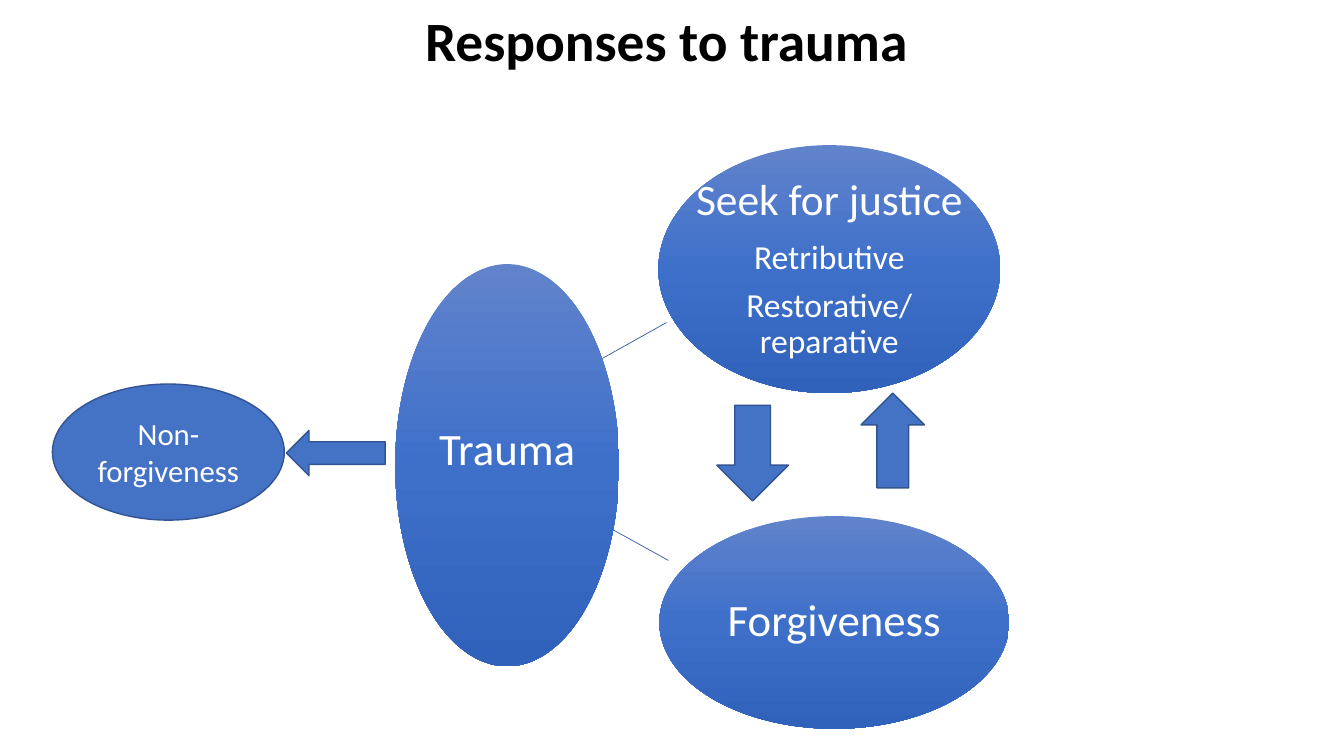
import copy
from dataclasses import dataclass

import pptx
import pptx.dml.color
import pptx.enum.shapes
import pptx.enum.text
import pptx.oxml.ns
import pptx.util
from lxml import etree

PX = 9144  # EMU per px, 100 px to the inch
FONT = "Calibri"
COLORS = {
    "black": "000000", "white": "FFFFFF", "blue": "4472C4", "edge": "325491",
    "link": "365B9D", "top": "6183CB", "mid": "3E70CA", "bottom": "3062BB",
}
GRADIENT = [(0, "top"), (0.5, "mid"), (1, "bottom")]
SHAPE = pptx.enum.shapes.MSO_SHAPE
CENTER = pptx.enum.text.PP_ALIGN.CENTER
MIDDLE = pptx.enum.text.MSO_ANCHOR.MIDDLE


@dataclass(frozen=True)
class Line:
    text: str
    size: float
    after: float = 0


@dataclass(frozen=True)
class Node:
    kind: int
    box: tuple[int, int, int, int]
    lines: tuple[Line, ...] = ()
    gradient: bool = False
    spacing: float = 1.0
    wrap: bool = True
    margins: tuple[int, int, int, int] = (10, 5, 10, 5)


LINKS = [(587, 514, 663, 556), (586, 362, 661, 320)]
NODES = [
    Node(SHAPE.OVAL, (392, 262, 222, 399), (Line("Trauma", 32),), True,
         wrap=False, margins=(0, 0, 0, 34)),
    Node(SHAPE.OVAL, (653, 144, 339, 246),
         (Line("Seek for justice", 31, 11), Line("Retributive", 24, 8.4),
          Line("Restorative/\vreparative", 24)),
         True, 0.9, False, (0, 0, 0, 0)),
    Node(SHAPE.OVAL, (654, 512, 347, 211), (Line("Forgiveness", 32),), True, 0.9,
         False, (0, 0, 0, 0)),
    Node(SHAPE.DOWN_ARROW, (711, 402, 71, 95)),
    Node(SHAPE.UP_ARROW, (854, 390, 63, 94)),
    Node(SHAPE.LEFT_ARROW, (284, 427, 98, 45)),
    Node(SHAPE.OVAL, (52, 381, 230, 135), (Line("Non-forgiveness", 22),)),
]


def rgb(name: str) -> pptx.dml.color.RGBColor:
    return pptx.dml.color.RGBColor.from_string(COLORS[name])


def emu(lengths: tuple[int, ...]) -> list[int]:
    return [n * PX for n in lengths]


def apply(target, formats: dict) -> None:
    for name, value in formats.items():
        setattr(target, name, value)


def write_lines(tf, lines: tuple[Line, ...], spacing: float, color: str, bold: bool = False) -> None:
    for i, line in enumerate(lines):
        p = tf.paragraphs[0] if i == 0 else tf.add_paragraph()
        p.text = line.text
        apply(p, {"alignment": CENTER, "line_spacing": spacing,
                  "space_before": pptx.util.Pt(0), "space_after": pptx.util.Pt(line.after)})
        for r in p.runs:
            apply(r.font, {"name": FONT, "size": pptx.util.Pt(line.size), "bold": bold})
            r.font.color.rgb = rgb(color)


def fill_gradient(sp) -> None:
    """Fill from top to bottom through the three gradient colours."""
    sp.fill.gradient()
    sp.fill.gradient_angle = 270
    stops = sp._element.spPr.find(".//" + pptx.oxml.ns.qn("a:gsLst"))
    stops.insert(1, copy.deepcopy(stops[0]))
    for stop, (position, color) in zip(sp.fill.gradient_stops, GRADIENT):
        stop.position = position
        stop.color.rgb = rgb(color)


def add_node(s, node: Node) -> None:
    sp = s.shapes.add_shape(node.kind, *emu(node.box))
    sp.shadow.inherit = False
    if node.gradient:
        fill_gradient(sp)
        sp.line.fill.background()
    else:
        sp.fill.solid()
        sp.fill.fore_color.rgb = rgb("blue")
        sp.line.color.rgb = rgb("edge")
        sp.line.width = pptx.util.Pt(1)
    if node.lines:
        tf = sp.text_frame
        sides = ("margin_left", "margin_top", "margin_right", "margin_bottom")
        apply(tf, dict(zip(sides, emu(node.margins))))
        apply(tf, {"word_wrap": node.wrap, "vertical_anchor": MIDDLE})
        write_lines(tf, node.lines, node.spacing, "white")


def add_link(s, ends: tuple[int, int, int, int]) -> None:
    link = s.shapes.add_connector(pptx.enum.shapes.MSO_CONNECTOR.STRAIGHT, *emu(ends))
    link.line.color.rgb = rgb("link")
    link.line.width = pptx.util.Pt(0.5)
    etree.SubElement(link._element.spPr, pptx.oxml.ns.qn("a:effectLst"))


def add_title(s, text: str) -> None:
    title = s.shapes.title
    apply(title, dict(zip(("left", "top", "width", "height"), emu((67, 9, 1200, 68)))))
    tf = title.text_frame
    apply(tf, {"auto_size": pptx.enum.text.MSO_AUTO_SIZE.NONE, "word_wrap": True,
               "vertical_anchor": MIDDLE, "margin_right": 22 * PX})
    write_lines(tf, (Line(text, 39.6),), 0.9, "black", True)


def main() -> None:
    prs = pptx.Presentation()
    prs.slide_width, prs.slide_height = emu((1333, 750))
    s = prs.slides.add_slide(prs.slide_layouts[5])
    add_title(s, "Responses to trauma")
    for ends in LINKS:
        add_link(s, ends)
    for node in NODES:
        add_node(s, node)
    prs.save("out.pptx")


if __name__ == "__main__":
    main()
